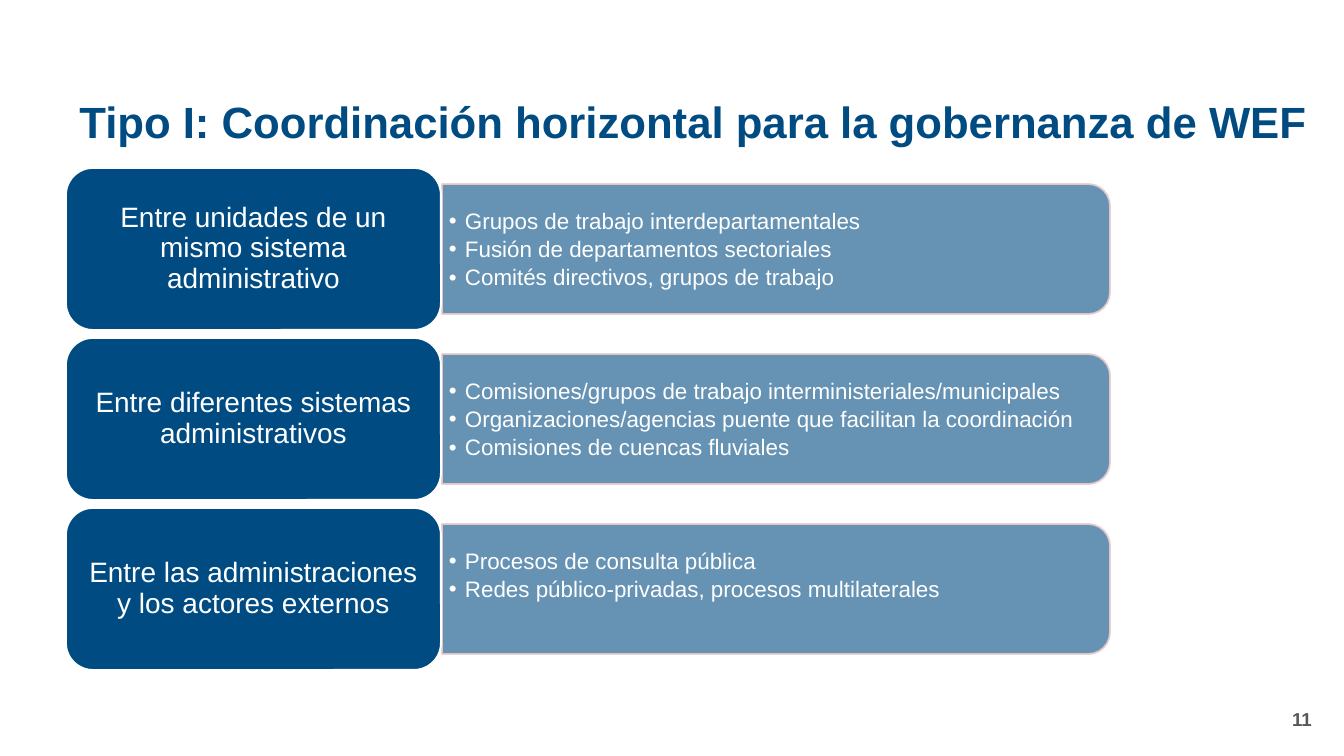
"""Build the slide on horizontal coordination for WEF governance."""
from lxml.etree import SubElement
from pptx import Presentation
from pptx.dml.color import RGBColor
from pptx.enum.shapes import MSO_SHAPE
from pptx.enum.text import MSO_ANCHOR, MSO_AUTO_SIZE, PP_ALIGN
from pptx.oxml.ns import qn
from pptx.util import Pt

EMU_PER_PX = 6804
COLORS = {"navy": "004C82", "white": "FFFFFF", "pink": "EBCCCC", "gray": "575756"}
ROWS = [
    ("Entre unidades de un mismo sistema administrativo",
     ["Grupos de trabajo interdepartamentales",
      "Fusión de departamentos sectoriales",
      "Comités directivos, grupos de trabajo"]),
    ("Entre diferentes sistemas administrativos",
     ["Comisiones/grupos de trabajo interministeriales/municipales",
      "Organizaciones/agencias puente que facilitan la coordinación",
      "Comisiones de cuencas fluviales"]),
    ("Entre las administraciones y los actores externos",
     ["Procesos de consulta pública",
      "Redes público-privadas, procesos multilaterales"]),
]
ROW_TOP, ROW_PITCH = 168, 170


def px(*lengths):
    return [length * EMU_PER_PX for length in lengths]


def apply_format(target, values):
    for name, value in values.items():
        setattr(target, name, value)


class SlideBuilder:
    def __init__(self, presentation):
        self.font = "Arial"
        self.slide = presentation.slides.add_slide(presentation.slide_layouts[5])

    def fill_text(self, shape, lines, size, color, bold=False, frame=None, layout=None, bullet=False):
        text_frame = shape.text_frame
        apply_format(text_frame, {"word_wrap": True, "auto_size": MSO_AUTO_SIZE.NONE,
                                  "vertical_anchor": MSO_ANCHOR.MIDDLE, **(frame or {})})
        for index, line in enumerate(lines):
            paragraph = text_frame.add_paragraph() if index else text_frame.paragraphs[0]
            apply_format(paragraph, {"line_spacing": 0.9, **(layout or {})})
            if bullet:
                self.add_bullet(paragraph)
            run = paragraph.add_run()
            run.text = line
            apply_format(run.font, {"name": self.font, "size": Pt(size), "bold": bold})
            run.font.color.rgb = RGBColor.from_string(COLORS[color])

    def add_bullet(self, paragraph):
        properties = paragraph._p.get_or_add_pPr()
        indent, = px(16)
        properties.set("marL", str(indent))
        properties.set("indent", str(-indent))
        SubElement(properties, qn("a:buFont"), typeface=self.font)
        SubElement(properties, qn("a:buChar"), char="•")

    def paint(self, fill, color, opacity=100):
        fill.solid()
        fill.fore_color.rgb = RGBColor.from_string(COLORS[color])
        if opacity < 100:
            color_element = fill._xPr.find(qn("a:solidFill"))[0]
            SubElement(color_element, qn("a:alpha"), val=str(opacity * 1000))

    def add_shape(self, kind, box, line_color, opacity=100, line_opacity=100):
        shape = self.slide.shapes.add_shape(kind, *px(*box))
        shape.shadow.inherit = False
        self.paint(shape.fill, "navy", opacity)
        shape.line.width = Pt(1)
        self.paint(shape.line.fill, line_color, line_opacity)
        return shape

    def add_title(self, text, box):
        title = self.slide.shapes.title
        apply_format(title, dict(zip(("left", "top", "width", "height"), px(*box))))
        self.fill_text(title, [text], 23.4, "navy", bold=True,
                       layout={"alignment": PP_ALIGN.LEFT})

    def add_page_number(self, text, box):
        number = self.slide.shapes.add_textbox(*px(*box))
        self.fill_text(number, [text], 10, "gray", bold=True,
                       layout={"alignment": PP_ALIGN.RIGHT, "line_spacing": 1.0})

    def add_panel(self, top, lines):
        left, width, height = 442, 668, 130
        offset = (width - height) // 2
        box = (left + offset, top - offset, height, width)
        panel = self.add_shape(MSO_SHAPE.ROUND_2_SAME_RECTANGLE, box, "pink", 60, 90)
        panel.rotation = 90
        text_box = self.slide.shapes.add_textbox(*px(left, top + 7, width - 7, height - 14))
        side, inset_top = px(7, 19)
        frame = {"vertical_anchor": MSO_ANCHOR.TOP, "margin_left": side,
                 "margin_right": side, "margin_top": inset_top, "margin_bottom": 0}
        self.fill_text(text_box, lines, 12, "white", frame=frame,
                       layout={"space_after": Pt(2.2)}, bullet=True)

    def add_label(self, top, text):
        label = self.add_shape(MSO_SHAPE.ROUNDED_RECTANGLE, (66, top, 375, 162), "white")
        side, edge = px(8, 4)
        frame = {"margin_left": side, "margin_right": side,
                 "margin_top": edge, "margin_bottom": edge}
        self.fill_text(label, [text], 15, "white", frame=frame,
                       layout={"alignment": PP_ALIGN.CENTER})


def main():
    presentation = Presentation()
    presentation.slide_width, presentation.slide_height = px(1344, 756)
    builder = SlideBuilder(presentation)
    builder.add_title("Tipo I: Coordinación horizontal para la gobernanza de WEF",
                      (66, 85, 1259, 79))
    builder.add_page_number("11", (1023, 699, 302, 40))
    for index, (label, lines) in enumerate(ROWS):
        top = ROW_TOP + index * ROW_PITCH
        builder.add_panel(top + 16, lines)
        builder.add_label(top, label)
    presentation.save("out.pptx")


if __name__ == "__main__":
    main()
